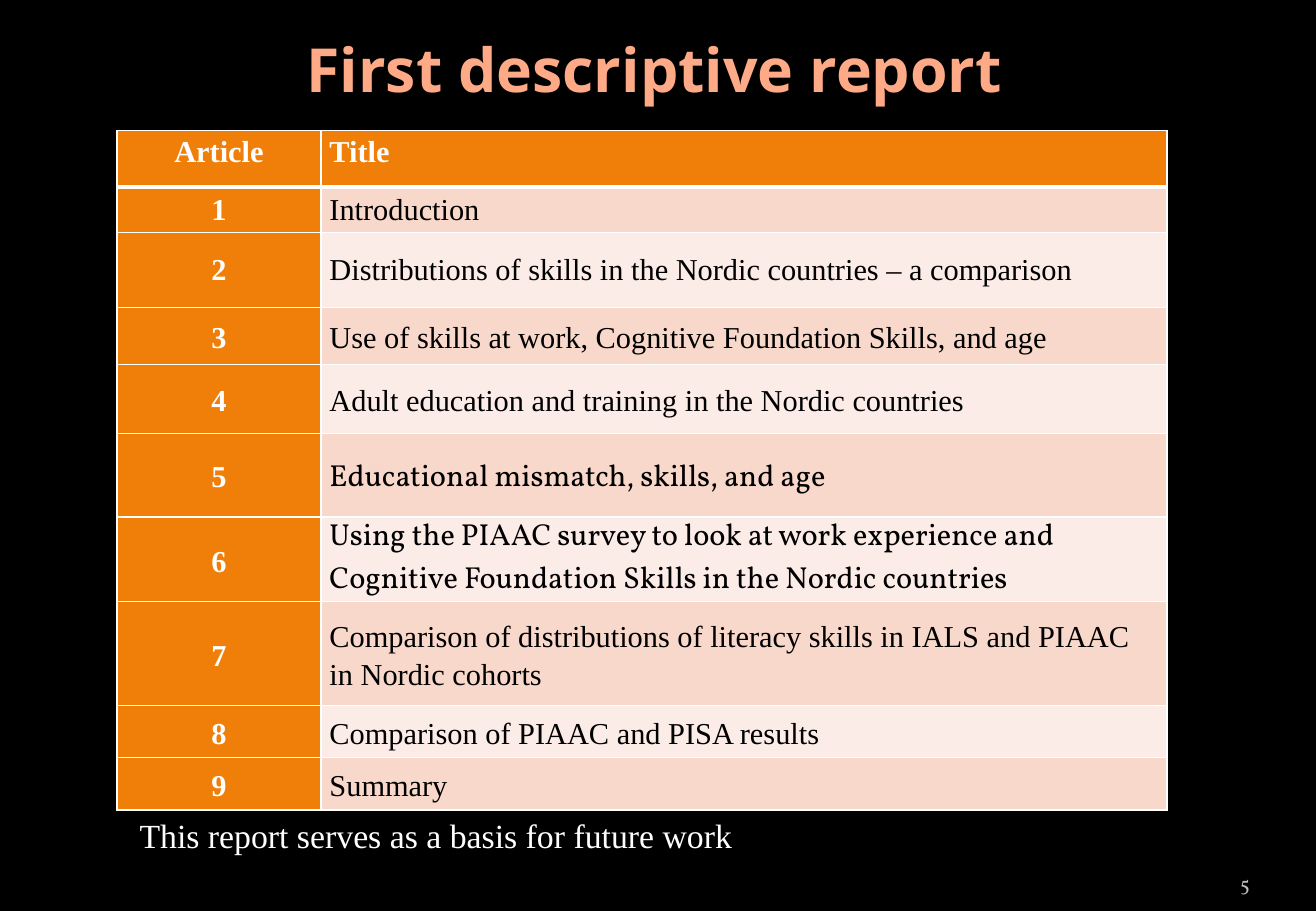
"""Build the "First descriptive report" slide with its table of articles."""
from dataclasses import dataclass

from lxml.etree import SubElement
from pptx import Presentation
from pptx.dml.color import RGBColor
from pptx.enum.text import MSO_ANCHOR as Anchor, PP_ALIGN as Align
from pptx.oxml.ns import qn
from pptx.slide import Slide
from pptx.table import _Cell as Cell
from pptx.text.text import TextFrame
from pptx.util import Pt


@dataclass(frozen=True)
class Theme:
    black: str = "000000"
    white: str = "FFFFFF"
    heading: str = "FFAA86"
    muted: str = "BDBDBD"
    accent: str = "F07F09"
    bands: tuple[str, str] = ("F9D8CC", "FCECE7")
    heading_font: str = "Noto Sans"
    body_font: str = "Times New Roman"
    accent_font: str = "Vollkorn"
    heading_size: float = 36
    note_size: float = 20
    table_size: float = 18
    number_size: float = 12
    thin: float = 1
    thick: float = 3


THEME = Theme()


@dataclass(frozen=True)
class TextStyle:
    size: float
    color: str
    font: str = THEME.body_font
    bold: bool = False
    align: Align = Align.LEFT
    spacing: float = 1.0


@dataclass(frozen=True)
class Label:
    text: str
    left: float
    top: float
    width: float
    height: float
    style: TextStyle
    anchor: Anchor = Anchor.TOP
    side_margin: float = 7.2


@dataclass(frozen=True)
class Article:
    title: str
    height: float
    font: str = THEME.body_font
    spacing: float = 1.15


LABELS = (
    Label("First descriptive report", 36.7, 6.5, 702, 67.7,
          TextStyle(THEME.heading_size, THEME.heading, THEME.heading_font, True, Align.CENTER),
          Anchor.MIDDLE),
    Label("5", 676, 505.4, 64.8, 28.8,
          TextStyle(THEME.number_size, THEME.muted, THEME.accent_font, align=Align.RIGHT),
          Anchor.BOTTOM, 0),
    Label("This report serves as a basis for future work", 75.6, 479.5, 555, 31.7,
          TextStyle(THEME.note_size, THEME.white)),
)
ARTICLES = (
    Article("Introduction", 27, spacing=1.0),
    Article("Distributions of skills in the Nordic countries – a comparison", 44.3, spacing=1.0),
    Article("Use of skills at work, Cognitive Foundation Skills, and age", 33.7),
    Article("Adult education and training in the Nordic countries", 41),
    Article("Educational mismatch, skills, and age", 49.5, THEME.accent_font),
    Article("Using the PIAAC survey to look at work experience and "
            "Cognitive Foundation Skills in the Nordic countries", 50, THEME.accent_font, 1.0),
    Article("Comparison of distributions of literacy skills in IALS and PIAAC "
            "in Nordic cohorts", 61.7),
    Article("Comparison of PIAAC and PISA results", 30.9),
    Article("Summary", 30.9),
)
HEADER_HEIGHT = 33.5
COLUMN_WIDTHS = (121, 501.5)
TABLE_LEFT, TABLE_TOP = 69.3, 77.5


def write_text(frame: TextFrame, text: str, style: TextStyle) -> None:
    """Write one styled paragraph into a text frame."""
    paragraph = frame.paragraphs[0]
    paragraph.text = text
    paragraph.alignment = style.align
    paragraph.line_spacing = style.spacing
    paragraph.font.size = Pt(style.size)
    paragraph.font.name = style.font
    paragraph.font.bold = style.bold
    paragraph.font.color.rgb = RGBColor.from_string(style.color)


def add_label(slide: Slide, label: Label) -> None:
    """Add a text box."""
    box = slide.shapes.add_textbox(
        Pt(label.left), Pt(label.top), Pt(label.width), Pt(label.height))
    frame = box.text_frame
    frame.word_wrap = True
    frame.vertical_anchor = label.anchor
    frame.margin_left = frame.margin_right = Pt(label.side_margin)
    write_text(frame, label.text, label.style)


def set_borders(cell: Cell, top: float, bottom: float) -> None:
    """Draw white borders around a cell."""
    properties = cell._tc.get_or_add_tcPr()
    widths = {"a:lnL": THEME.thin, "a:lnR": THEME.thin, "a:lnT": top, "a:lnB": bottom}
    for tag, width in widths.items():
        line = SubElement(properties, qn(tag), w=str(Pt(width)))
        fill = SubElement(line, qn("a:solidFill"))
        SubElement(fill, qn("a:srgbClr"), val=THEME.white)


def fill_cell(cell: Cell, text: str, style: TextStyle, color: str, anchor: Anchor,
              top: float, bottom: float) -> None:
    """Set the text, borders and fill of a table cell."""
    cell.margin_left = cell.margin_right = Pt(5)
    cell.margin_top = cell.margin_bottom = Pt(0)
    cell.vertical_anchor = anchor
    write_text(cell.text_frame, text, style)
    set_borders(cell, top, bottom)
    cell.fill.solid()
    cell.fill.fore_color.rgb = RGBColor.from_string(color)


def add_article_table(slide: Slide) -> None:
    """Add the table of articles under its header row."""
    heights = (HEADER_HEIGHT, *(article.height for article in ARTICLES))
    table = slide.shapes.add_table(
        len(heights), len(COLUMN_WIDTHS), Pt(TABLE_LEFT), Pt(TABLE_TOP),
        Pt(sum(COLUMN_WIDTHS)), Pt(sum(heights))).table
    for column, width in zip(table.columns, COLUMN_WIDTHS):
        column.width = Pt(width)
    for row, height in zip(table.rows, heights):
        row.height = Pt(height)

    for index, (text, align) in enumerate((("Article", Align.CENTER), ("Title", Align.LEFT))):
        style = TextStyle(THEME.table_size, THEME.white, bold=True, align=align, spacing=1.15)
        fill_cell(table.cell(0, index), text, style, THEME.accent, Anchor.TOP,
                  THEME.thin, THEME.thick)
    for number, article in enumerate(ARTICLES, start=1):
        top = THEME.thick if number == 1 else THEME.thin
        number_spacing = 1.0 if number <= 2 else 1.15
        number_style = TextStyle(THEME.table_size, THEME.white, bold=True,
                                 align=Align.CENTER, spacing=number_spacing)
        title_style = TextStyle(THEME.table_size, THEME.black, article.font,
                                spacing=article.spacing)
        fill_cell(table.cell(number, 0), str(number), number_style, THEME.accent,
                  Anchor.MIDDLE, top, THEME.thin)
        fill_cell(table.cell(number, 1), article.title, title_style,
                  THEME.bands[(number - 1) % 2], Anchor.MIDDLE, top, THEME.thin)


def main() -> None:
    """Create the presentation and save it."""
    presentation = Presentation()
    presentation.slide_width, presentation.slide_height = Pt(780), Pt(540)
    slide = presentation.slides.add_slide(presentation.slide_layouts[6])
    slide.background.fill.solid()
    slide.background.fill.fore_color.rgb = RGBColor.from_string(THEME.black)
    add_article_table(slide)
    for label in LABELS:
        add_label(slide, label)
    presentation.save("out.pptx")


if __name__ == "__main__":
    main()
